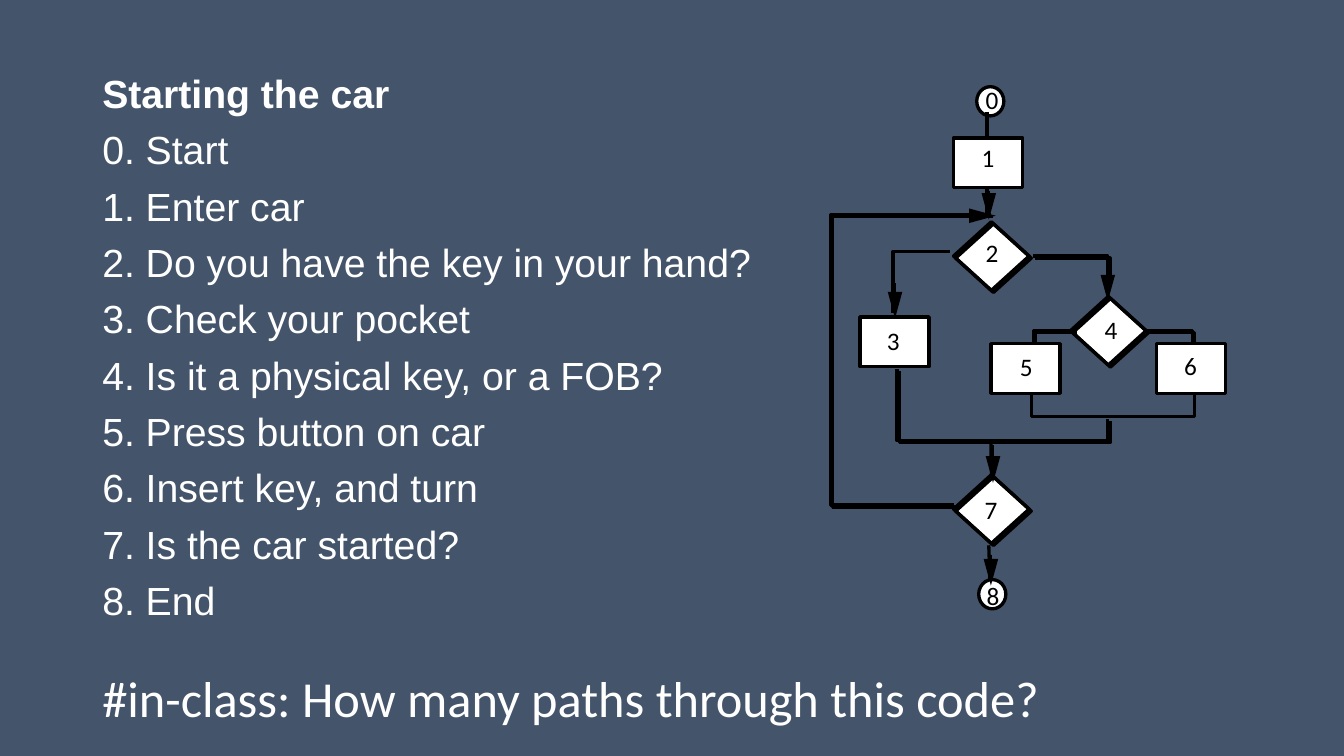
from pptx import Presentation
from pptx.dml.color import RGBColor
from pptx.enum.shapes import MSO_CONNECTOR, MSO_SHAPE
from pptx.enum.text import MSO_ANCHOR
from pptx.oxml.ns import qn
from pptx.util import Pt
from lxml import etree

SLATE = RGBColor(0x44, 0x54, 0x6A)
WHITE = RGBColor(0xFF, 0xFF, 0xFF)
BLACK = RGBColor(0, 0, 0)
STRAIGHT = MSO_CONNECTOR.STRAIGHT
CIRCLE, BOX, DIAMOND = MSO_SHAPE.OVAL, MSO_SHAPE.RECTANGLE, MSO_SHAPE.DIAMOND
TOP = MSO_ANCHOR.TOP

STEPS = ["Starting the car", "0. Start", "1. Enter car",
         "2. Do you have the key in your hand?", "3. Check your pocket",
         "4. Is it a physical key, or a FOB?", "5. Press button on car",
         "6. Insert key, and turn", "7. Is the car started?", "8. End"]
QUESTION = "#in-class: How many paths through this code?"

EDGE_WIDTH, SHAFT_WIDTH = 2.38, 1.38
ECHO = 1.5
HEAD_LENGTH, HEAD_HALF = 19, 5.2
LABEL_SIZE = (23.8, 28.8)
NODE_SIZES = {CIRCLE: (19.4, 20.9), BOX: (49.5, 35.5), DIAMOND: (54, 49)}

NODES = [
    ("0", CIRCLE, (104.4, 0), (103.7, -5)),
    ("1", BOX, (87.8, 36.7), (100.8, 36)),
    ("2", DIAMOND, (87.8, 96.5), (103.7, 104.4)),
    ("3", BOX, (20.9, 164.5), (33.1, 167)),
    ("4", DIAMOND, (171.4, 149.8), (188.6, 159.1)),
    ("5", BOX, (114.5, 183.6), (128.2, 185.8)),
    ("6", BOX, (232.6, 183.6), (245.5, 185)),
    ("7", DIAMOND, (87.8, 277.2), (103, 288)),
    ("8", CIRCLE, (105.8, 352.1), (104.4, 349.2)),
]
ECHOED_EDGES = [
    [(144.7, 121), (198, 121), (198, 137.5)],
    [(225.4, 174.2), (258.5, 174.2), (258.5, 198.7)],
    [(174.2, 174.2), (144.7, 174.2), (144.7, 203.8)],
    [(87.8, 298.8), (0, 298.8), (0, 91.4), (114.5, 91.4)],
    [(198, 237.6), (198, 252.7), (47.5, 252.7), (47.5, 201.6)],
]
PLAIN_EDGES = [
    [(85, 118), (44.6, 118), (44.6, 162)],
    [(143.3, 220.3), (143.3, 235.4), (259.9, 235.4), (259.9, 220.3)],
]
STRAIGHT_EDGES = [
    ((111.6, 18), (111.6, 93.6)),
    ((114.5, 254.2), (115, 278.6)),
    ((113, 327.6), (113.8, 352.1)),
]
DOWN_ARROWS = [((113, 95), 1.4), ((46, 165.6), 6), ((198, 153.4), 8),
               ((116, 283), 8), ((114.5, 356.4), 3)]
LOOP_ARROW = ((118, 92.2), 1.4)


def add_text(slide, box, lines, size, font, color, wrap=True,
             bold_first=False, before=0, spacing=None):
    """Place lines of text in a box, one paragraph each."""
    frame = slide.shapes.add_textbox(*map(Pt, box)).text_frame
    frame.word_wrap = wrap
    frame.vertical_anchor = TOP
    for index, line in enumerate(lines):
        paragraph = frame.add_paragraph() if index else frame.paragraphs[0]
        paragraph.space_before = Pt(before)
        if spacing:
            paragraph.line_spacing = spacing
        run = paragraph.add_run()
        run.text = line
        run.font.size = Pt(size)
        run.font.name = font
        run.font.bold = bold_first and index == 0
        run.font.color.rgb = color


def paint(shape, fill=None, line=None):
    """Set a shape's fill and outline and drop its shadow."""
    shape.shadow.inherit = False
    if fill is None:
        shape.fill.background()
    else:
        shape.fill.solid()
        shape.fill.fore_color.rgb = fill
    if line is None:
        shape.line.fill.background()
    else:
        shape.line.color.rgb = line
        shape.line.width = Pt(EDGE_WIDTH)


def add_node(slide, left, top, kind):
    """Draw one flowchart node, with a doubled outline on diamonds."""
    width, height = NODE_SIZES[kind]
    layers = [(0, WHITE)]
    if kind == DIAMOND:
        layers = [(ECHO, WHITE), (0, None)]
    for shift, fill in layers:
        node = slide.shapes.add_shape(kind, Pt(left + shift), Pt(top + shift),
                                      Pt(width), Pt(height))
        paint(node, fill, BLACK)


def add_outline(slide, points, closed=False):
    """Draw a bent edge, or a filled outline when closed."""
    corners = [(Pt(x), Pt(y)) for x, y in points]
    builder = slide.shapes.build_freeform(*corners[0])
    builder.add_line_segments(corners[1:], close=closed)
    outline = builder.convert_to_shape()
    if closed:
        paint(outline, fill=BLACK)
    else:
        paint(outline, line=BLACK)


def add_line(slide, start, end, width):
    """Draw a straight black line."""
    line = slide.shapes.add_connector(STRAIGHT, *map(Pt, (*start, *end)))
    line.line.color.rgb = BLACK
    line.line.width = Pt(width)
    etree.SubElement(line._element.spPr, qn("a:effectLst"))


def add_arrow(slide, tip, shaft, direction):
    """Draw a long arrowhead ending at its tip, with a short thin shaft."""
    (x, y), (dx, dy) = tip, direction
    base_x, base_y = x - dx * HEAD_LENGTH, y - dy * HEAD_LENGTH
    side_x, side_y = dy * HEAD_HALF, dx * HEAD_HALF
    add_line(slide, (base_x - dx * shaft, base_y - dy * shaft),
             (base_x, base_y), SHAFT_WIDTH)
    add_outline(slide, [tip, (base_x - side_x, base_y - side_y),
                        (base_x + side_x, base_y + side_y)], closed=True)


def add_flowchart(slide, left, top):
    """Draw the control-flow graph from its top left corner."""
    def at(point, shift=0):
        return left + point[0] + shift, top + point[1] + shift

    for _, kind, place, _ in NODES:
        if kind != BOX:
            add_node(slide, *at(place), kind)
    for edge in ECHOED_EDGES:
        for shift in (ECHO, 0):
            add_outline(slide, [at(point, shift) for point in edge])
    for edge in PLAIN_EDGES:
        add_outline(slide, [at(point) for point in edge])
    for start, end in STRAIGHT_EDGES:
        add_line(slide, at(start), at(end), EDGE_WIDTH)
    for _, kind, place, _ in NODES:
        if kind == BOX:
            add_node(slide, *at(place), kind)
    for tip, shaft in DOWN_ARROWS:
        add_arrow(slide, at(tip), shaft, (0, 1))
    tip, shaft = LOOP_ARROW
    add_arrow(slide, at(tip), shaft, (1, 0))
    for label, _, _, place in NODES:
        add_text(slide, (*at(place), *LABEL_SIZE), [label], 18, "Calibri",
                 BLACK, wrap=False)


def main():
    """Build the slide and save it."""
    deck = Presentation()
    deck.slide_width, deck.slide_height = Pt(960), Pt(540)
    slide = deck.slides.add_slide(deck.slide_layouts[6])
    slide.background.fill.solid()
    slide.background.fill.fore_color.rgb = SLATE
    add_text(slide, (66, 49.7, 828, 436.3), STEPS, 28, "Arial", WHITE,
             bold_first=True, before=10, spacing=0.9)
    add_flowchart(slide, 593.3, 61.9)
    add_text(slide, (66, 473, 705.6, 51), [QUESTION], 36, "Calibri", WHITE,
             wrap=False)
    deck.save("out.pptx")


if __name__ == "__main__":
    main()
